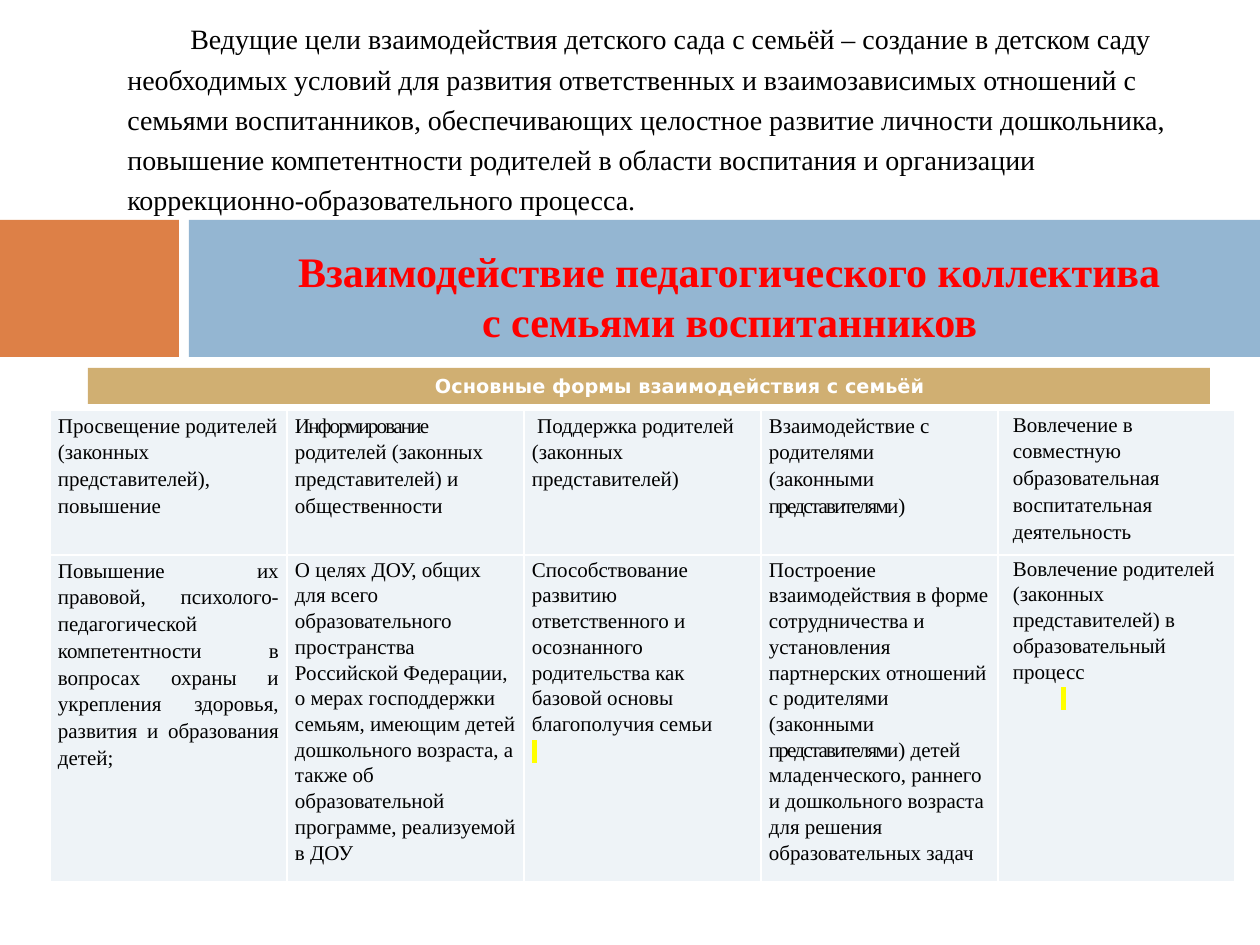
from lxml.etree import SubElement
from pptx import Presentation
from pptx.dml.color import RGBColor
from pptx.enum.shapes import MSO_SHAPE
from pptx.enum.text import MSO_ANCHOR, PP_ALIGN
from pptx.oxml.ns import qn
from pptx.util import Emu, Pt

PX_PER_INCH = 126
COLORS = {
    "orange": "DD8047", "blue": "94B6D2", "sand": "D0AF72", "cell": "EEF3F7",
    "red": "FF0000", "white": "FFFFFF", "black": "000000", "yellow": "FFFF00",
}
SERIF = "Times New Roman"
EXACT = Pt(14.7)
CONDENSED = {"spacing": -100}
MARKED = (" ", {"highlight": "yellow"})

INTRO = (
    "Ведущие цели взаимодействия детского сада с семьёй – создание в детском саду "
    "необходимых условий для развития ответственных и взаимозависимых отношений с "
    "семьями воспитанников, обеспечивающих целостное развитие личности дошкольника, "
    "повышение компетентности родителей в области воспитания и организации "
    "коррекционно-образовательного процесса."
)

# A cell is a list of (runs, paragraph format); a run is (text, run format).
FORMS = [
    [([("Просвещение родителей (законных представителей), повышение", {})], {})],
    [([("Информирование ", CONDENSED),
       ("родителей (законных представителей) и общественности", {})], {})],
    [([(" Поддержка родителей (законных представителей)", {})], {})],
    [([("Взаимодействие с родителями", {})], {}),
     ([("(законными ", {}), ("представителями", CONDENSED), (")", {})], {})],
    [([("Вовлечение в совместную", {})], {"left": 15}),
     ([("образовательная воспитательная деятельность", {})], {"left": 15})],
]
GOALS = [
    [([("Повышение их правовой, психолого-педагогической компетентности в вопросах "
        "охраны и укрепления здоровья, развития и образования детей;", {})],
      {"align": PP_ALIGN.JUSTIFY})],
    [([("О целях ДОУ, общих для всего образовательного пространства Российской "
        "Федерации, о мерах господдержки семьям, имеющим детей дошкольного возраста, "
        "а также об образовательной программе, реализуемой в ДОУ", {})],
      {"line": EXACT, "after": 15})],
    [([("Способствование развитию ответственного и осознанного родительства как "
        "базовой основы благополучия семьи", {})], {"line": EXACT}),
     ([MARKED], {"align": PP_ALIGN.JUSTIFY})],
    [([("Построение взаимодействия в форме сотрудничества и установления партнерских "
        "отношений с родителями (законными ", {}),
       ("представителями", CONDENSED),
       (") детей младенческого, раннего и дошкольного возраста для решения "
        "образовательных задач", {})], {"line": EXACT})],
    [([("Вовлечение родителей (законных представителей) в образовательный процесс", {})],
      {"line": EXACT, "left": 15}),
     ([MARKED], {"align": PP_ALIGN.JUSTIFY, "indent": 63})],
]


def px(value):
    return Emu(round(value * 914400 / PX_PER_INCH))


def rgb(name):
    return RGBColor.from_string(COLORS[name])


def add_run(paragraph, text, size=12, font=SERIF, color="black", bold=False,
            spacing=0, highlight=None):
    """Spacing is in hundredths of a point."""
    run = paragraph.add_run()
    run.text = text
    run.font.size, run.font.name, run.font.bold = Pt(size), font, bold
    run.font.color.rgb = rgb(color)
    properties = run.font._element
    if spacing:
        properties.set("spc", str(spacing))
    if highlight:
        mark = SubElement(properties, qn("a:highlight"))
        SubElement(mark, qn("a:srgbClr"), val=COLORS[highlight])
        properties.find(qn("a:solidFill")).addnext(mark)


def format_paragraph(paragraph, align=PP_ALIGN.LEFT, line=1.0, left=0, indent=0,
                     before=0, after=0):
    paragraph.alignment = align
    paragraph.line_spacing = line
    paragraph.space_before, paragraph.space_after = Pt(before), Pt(after)
    properties = paragraph._p.get_or_add_pPr()
    properties.set("marL", str(px(left)))
    properties.set("indent", str(px(indent)))


class SlideBuilder:
    def __init__(self, slide):
        self.slide = slide

    def block(self, left, top, width, height, color):
        shape = self.slide.shapes.add_shape(
            MSO_SHAPE.RECTANGLE, px(left), px(top), px(width), px(height))
        shape.shadow.inherit = False
        shape.fill.solid()
        shape.fill.fore_color.rgb = rgb(color)
        shape.line.fill.background()
        return shape

    def text_box(self, left, top, width, height, anchor=MSO_ANCHOR.TOP):
        """Return the first paragraph of a new wrapping text box."""
        frame = self.slide.shapes.add_textbox(
            px(left), px(top), px(width), px(height)).text_frame
        frame.word_wrap = True
        frame.vertical_anchor = anchor
        return frame.paragraphs[0]

    def table(self, left, top, column_width, row_heights, rows):
        columns = len(rows[0])
        table = self.slide.shapes.add_table(
            len(rows), columns, px(left), px(top),
            px(column_width * columns), px(sum(row_heights))).table
        table.first_row = table.horz_banding = False
        for column in table.columns:
            column.width = px(column_width)
        for row, height, contents in zip(table.rows, row_heights, rows):
            row.height = px(height)
            for index, (cell, content) in enumerate(zip(row.cells, contents)):
                self.cell(cell, content, flush=index == columns - 1)

    def cell(self, cell, content, flush):
        """Fill one cell; a flush cell has no margins."""
        cell.margin_left = cell.margin_right = px(0 if flush else 8)
        cell.margin_top, cell.margin_bottom = px(0 if flush else 1), px(0)
        for side in ("lnL", "lnR", "lnT", "lnB"):
            border = SubElement(cell._tc.get_or_add_tcPr(), qn(f"a:{side}"), w=str(Pt(1)))
            fill = SubElement(border, qn("a:solidFill"))
            SubElement(fill, qn("a:srgbClr"), val=COLORS["white"])
        cell.fill.solid()
        cell.fill.fore_color.rgb = rgb("cell")
        frame = cell.text_frame
        for index, (runs, layout) in enumerate(content):
            paragraph = frame.add_paragraph() if index else frame.paragraphs[0]
            format_paragraph(paragraph, **{"line": 1.15, **layout})
            for text, style in runs:
                add_run(paragraph, text, **style)


def main():
    presentation = Presentation()
    presentation.slide_width, presentation.slide_height = px(1260), px(945)
    builder = SlideBuilder(presentation.slides.add_slide(presentation.slide_layouts[6]))

    builder.block(0, 220, 179, 137, "orange")
    builder.block(189, 220, 1071, 137, "blue")

    intro = builder.text_box(115, 9, 1071, 246)
    format_paragraph(intro, line=1.2, indent=63, before=7)
    add_run(intro, INTRO, size=16)

    title = builder.text_box(189, 227, 1071, 137, MSO_ANCHOR.MIDDLE)
    format_paragraph(title, align=PP_ALIGN.CENTER, line=Pt(29))
    heading = {"size": 24, "color": "red", "bold": True}
    add_run(title, " ", size=24, font="Cabin", color="white", bold=True)
    add_run(title, "Взаимодействие педагогического коллектива", **heading)
    title.add_line_break()
    add_run(title, " с семьями воспитанников", **heading)

    banner = builder.block(88, 368, 1122, 36, "sand").text_frame
    banner.word_wrap = True
    banner.vertical_anchor = MSO_ANCHOR.MIDDLE
    caption = banner.paragraphs[0]
    format_paragraph(caption, align=PP_ALIGN.CENTER, indent=62)
    add_run(caption, "Основные формы взаимодействия с семьёй", size=11,
            font="DejaVu Sans", color="white", bold=True)

    builder.table(50, 410, 237, [143, 327], [FORMS, GOALS])
    presentation.save("out.pptx")


if __name__ == "__main__":
    main()
